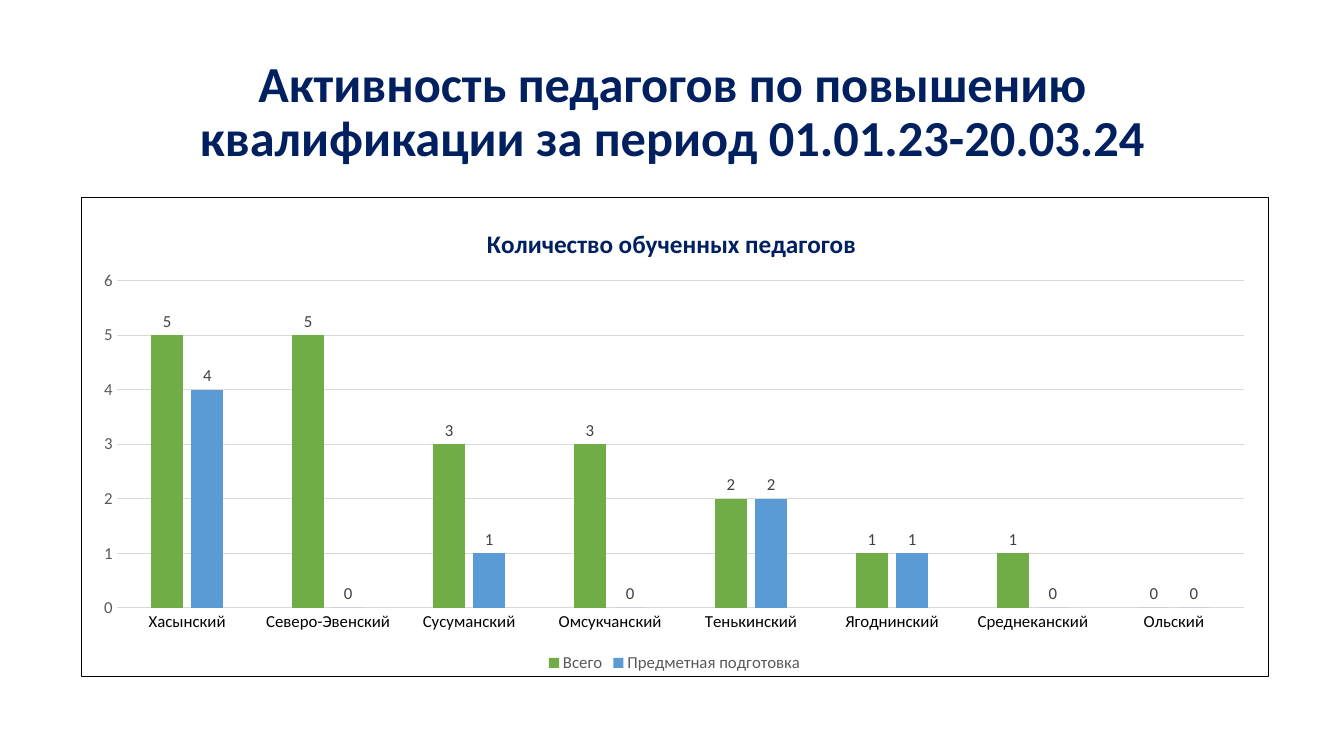
from dataclasses import dataclass
import lxml.etree
import pptx
import pptx.chart.data
import pptx.dml.color
import pptx.enum.chart
import pptx.enum.text
import pptx.oxml
import pptx.oxml.ns
import pptx.util


@dataclass(frozen=True)
class Theme:
    face: str = "Calibri"
    navy: str = "002060"
    black: str = "000000"
    grey: str = "595959"
    dark: str = "404040"
    rule: str = "D9D9D9"
    green: str = "70AD47"
    blue: str = "5B9BD5"
    head: int = 36
    title: int = 18
    small: int = 12
    line: float = 0.75


@dataclass(frozen=True)
class Box:
    left: float
    top: float
    width: float
    height: float


@dataclass(frozen=True)
class Series:
    name: str
    vals: tuple[int, ...]
    color: str


THEME = Theme()
WIDE, HIGH = pptx.util.Inches(13.33), pptx.util.Inches(7.5)
HEAD = Box(0.069, 0.053, 0.863, 0.193)
CHART = Box(0.06, 0.261, 0.884, 0.635)
PLOT = Box(0.03, 0.173, 0.95, 0.683)
AREAS = ("Хасынский", "Северо-Эвенский", "Сусуманский", "Омсукчанский",
         "Тенькинский", "Ягоднинский", "Среднеканский", "Ольский")
BARS = (
    Series("Всего", (5, 5, 3, 3, 2, 1, 1, 0), THEME.green),
    Series("Предметная подготовка", (4, 0, 1, 0, 2, 1, 0, 0), THEME.blue),
)


def place(box: Box) -> tuple[int, int, int, int]:
    return (int(box.left * WIDE), int(box.top * HIGH),
            int(box.width * WIDE), int(box.height * HIGH))


def paint(font, size: float, color: str, bold: bool = False) -> None:
    font.name = THEME.face
    font.size = pptx.util.Pt(size)
    font.bold = bold
    font.color.rgb = pptx.dml.color.RGBColor.from_string(color)


def rule(line) -> None:
    line.width = pptx.util.Pt(THEME.line)
    line.color.rgb = pptx.dml.color.RGBColor.from_string(THEME.rule)


def lay(owner, index: int, parts: dict[str, str | float]) -> None:
    tag = pptx.oxml.ns.qn
    for old in owner.findall(tag("c:layout")):
        owner.remove(old)
    outer = lxml.etree.Element(tag("c:layout"))
    inner = lxml.etree.SubElement(outer, tag("c:manualLayout"))
    for name, val in parts.items():
        lxml.etree.SubElement(inner, tag(f"c:{name}")).set("val", str(val))
    owner.insert(index, outer)


def frame(chart) -> None:
    space = pptx.oxml.ns.nsdecls("c", "a")
    edge = pptx.oxml.parse_xml(
        f'<c:spPr {space}><a:noFill/><a:ln w="{pptx.util.Pt(THEME.line)}">'
        f'<a:solidFill><a:srgbClr val="{THEME.black}"/></a:solidFill>'
        f'</a:ln></c:spPr>')
    chart.element.find(pptx.oxml.ns.qn("c:chart")).addnext(edge)


def add_head(slide, text: str) -> None:
    body = slide.shapes.add_textbox(*place(HEAD)).text_frame
    body.word_wrap = True
    body.vertical_anchor = pptx.enum.text.MSO_ANCHOR.MIDDLE
    body.text = text
    para = body.paragraphs[0]
    para.alignment = pptx.enum.text.PP_ALIGN.CENTER
    para.line_spacing = 0.9
    paint(para.runs[0].font, THEME.head, THEME.navy, True)


def style_title(chart, text: str) -> None:
    chart.has_title = True
    title = chart.chart_title
    title.text_frame.text = text
    paint(title.text_frame.paragraphs[0].runs[0].font,
          THEME.title, THEME.navy, True)
    lay(title.element, 1, {"xMode": "edge", "yMode": "edge",
                           "x": 0.338, "y": 0.05})


def style_axes(chart) -> None:
    enum = pptx.enum.chart
    cats, vals = chart.category_axis, chart.value_axis
    for axis, color in ((cats, THEME.black), (vals, THEME.grey)):
        axis.major_tick_mark = enum.XL_TICK_MARK.NONE
        axis.minor_tick_mark = enum.XL_TICK_MARK.NONE
        paint(axis.tick_labels.font, THEME.small, color)
    rule(cats.format.line)
    vals.format.line.fill.background()
    vals.minimum_scale, vals.maximum_scale, vals.major_unit = 0, 6, 1
    vals.has_major_gridlines = True
    rule(vals.major_gridlines.format.line)


def style_bars(chart) -> None:
    plot = chart.plots[0]
    plot.gap_width, plot.overlap = 219, -27
    plot.vary_by_categories = False
    for bar, item in zip(plot.series, BARS):
        bar.format.fill.solid()
        bar.format.fill.fore_color.rgb = \
            pptx.dml.color.RGBColor.from_string(item.color)
        tags = bar.data_labels
        tags.show_value = True
        tags.position = pptx.enum.chart.XL_LABEL_POSITION.OUTSIDE_END
        paint(tags.font, THEME.small, THEME.dark)


def add_chart(slide) -> None:
    enum = pptx.enum.chart
    data = pptx.chart.data.CategoryChartData(number_format="General")
    data.categories = AREAS
    for item in BARS:
        data.add_series(item.name, item.vals)
    chart = slide.shapes.add_chart(
        enum.XL_CHART_TYPE.COLUMN_CLUSTERED, *place(CHART), data).chart
    paint(chart.font, THEME.small, THEME.black)
    style_title(chart, "Количество обученных педагогов")
    style_axes(chart)
    style_bars(chart)
    chart.has_legend = True
    chart.legend.position = enum.XL_LEGEND_POSITION.BOTTOM
    chart.legend.include_in_layout = False
    paint(chart.legend.font, THEME.small, THEME.grey)
    area = chart.element.find(f".//{pptx.oxml.ns.qn('c:plotArea')}")
    lay(area, 0, {"layoutTarget": "inner", "xMode": "edge", "yMode": "edge",
                  "x": PLOT.left, "y": PLOT.top,
                  "w": PLOT.width, "h": PLOT.height})
    frame(chart)


def main() -> None:
    deck = pptx.Presentation()
    deck.slide_width, deck.slide_height = WIDE, HIGH
    slide = deck.slides.add_slide(deck.slide_layouts[6])
    add_head(slide, "Активность педагогов по повышению квалификации "
                    "за период 01.01.23-20.03.24")
    add_chart(slide)
    deck.save("out.pptx")


if __name__ == "__main__":
    main()
